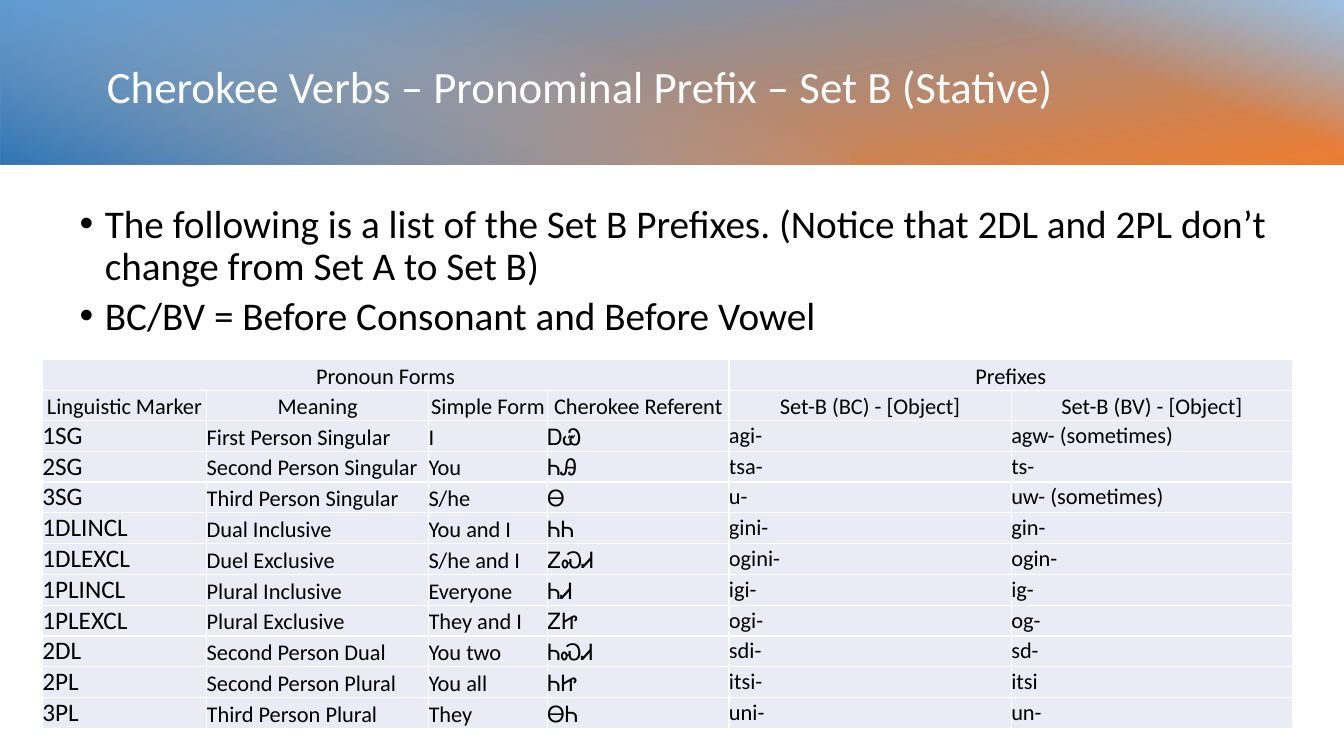
from pptx import Presentation
from pptx.dml.color import RGBColor
from pptx.enum.shapes import MSO_SHAPE
from pptx.enum.text import MSO_ANCHOR as ANCHOR, MSO_AUTO_SIZE as AUTO_SIZE, PP_ALIGN as ALIGN
from pptx.oxml import parse_xml
from pptx.oxml.ns import nsdecls, qn
from pptx.util import Pt

EMU_PER_PX = 9144  # 100 px to the inch
THEME = {
    "font": "Calibri",
    "title": 32, "body": 28, "marker": 18, "cell": 16,
    "white": "FFFFFF", "black": "000000", "cell_fill": "E9EBF5",
    "blue": "5B9BD5", "orange": "ED7D31", "light_blue": "9DC3E6", "deep_blue": "2E75B6",
}


def px(*lengths):
    return [length * EMU_PER_PX for length in lengths]


def add_run(paragraph, text, size, color):
    run = paragraph.add_run()
    run.text = text
    run.font.name = THEME["font"]
    run.font.size = Pt(THEME[size])
    run.font.color.rgb = RGBColor.from_string(THEME[color])


deck = Presentation()
deck.slide_width, deck.slide_height = px(1333, 750)
slide = deck.slides.add_slide(deck.slide_layouts[1])
title, notes_list = slide.placeholders

# Gradient banner behind the title: box, rotation, angle, stops (percent, colour, opacity)
banner = slide.shapes.add_group_shape()
banner_layers = [
    ((584, -587, 166, 1334), 270, 170, [(0, "blue", 100), (100, "orange", 100)]),
    ((975, -197, 165, 554), 270, 20, [(59, "light_blue", 0), (100, "light_blue", 100)]),
    ((339, -342, 166, 844), 90, 20, [(29, "light_blue", 0), (100, "deep_blue", 100)]),
]
for box, rotation, angle, stops in banner_layers:
    layer = banner.shapes.add_shape(MSO_SHAPE.RECTANGLE, *px(*box))
    layer.rotation = rotation
    layer.shadow.inherit = False
    layer.line.fill.background()
    stop_xml = "".join(
        f'<a:gs pos="{percent * 1000}"><a:srgbClr val="{THEME[color]}">'
        f'<a:alpha val="{opacity * 1000}"/></a:srgbClr></a:gs>'
        for percent, color, opacity in stops)
    gradient = parse_xml(
        f'<a:gradFill {nsdecls("a")} rotWithShape="1"><a:gsLst>{stop_xml}</a:gsLst>'
        f'<a:lin ang="{angle * 60000}" scaled="0"/></a:gradFill>')
    layer.element.spPr.find(qn("a:prstGeom")).addnext(gradient)
title.element.addprevious(banner.element)

# Title
title.left, title.top, title.width, title.height = px(96, 33, 1146, 110)
title.text_frame.auto_size = AUTO_SIZE.NONE
title.text_frame.vertical_anchor = ANCHOR.MIDDLE
heading = title.text_frame.paragraphs[0]
heading.alignment = ALIGN.LEFT
heading.line_spacing = 0.9
add_run(heading, "Cherokee Verbs – Pronominal Prefix – Set B (Stative)", "title", "white")

# Bulleted list
notes_list.left, notes_list.top, notes_list.width, notes_list.height = px(19, 198, 1287, 159)
notes_list.text_frame.auto_size = AUTO_SIZE.NONE
points = [
    "The following is a list of the Set B Prefixes. "
    "(Notice that 2DL and 2PL don’t change from Set A to Set B)",
    "BC/BV = Before Consonant and Before Vowel",
]
for index, point in enumerate(points):
    frame = notes_list.text_frame
    bullet = frame.add_paragraph() if index else frame.paragraphs[0]
    bullet.level = 1
    bullet.line_spacing = 0.9
    bullet.space_before = Pt(5)
    properties = bullet._p.get_or_add_pPr()
    margin, indent = px(75, -25)
    properties.set("marL", str(margin))
    properties.set("indent", str(indent))
    properties.append(parse_xml(f'<a:buFont {nsdecls("a")} typeface="Arial"/>'))
    properties.append(parse_xml(f'<a:buChar {nsdecls("a")} char="•"/>'))
    add_run(bullet, point, "body", "black")

# Prefix table
prefix_rows = [
    ("Pronoun Forms", "", "", "", "Prefixes", ""),
    ("Linguistic Marker", "Meaning", "Simple Form", "Cherokee Referent",
     "Set-B (BC) - [Object]", "Set-B (BV) - [Object]"),
    ("1SG", "First Person Singular", "I", "ᎠᏯ", "agi-", "agw- (sometimes)"),
    ("2SG", "Second Person Singular", "You", "ᏂᎯ", "tsa-", "ts-"),
    ("3SG", "Third Person Singular", "S/he", "Ꮎ", "u-", "uw- (sometimes)"),
    ("1DLINCL", "Dual Inclusive", "You and I", "ᏂᏂ", "gini-", "gin-"),
    ("1DLEXCL", "Duel Exclusive", "S/he and I", "ᏃᏍᏗ", "ogini-", "ogin-"),
    ("1PLINCL", "Plural Inclusive", "Everyone", "ᏂᏗ", "igi-", "ig-"),
    ("1PLEXCL", "Plural Exclusive", "They and I", "ᏃᏥ", "ogi-", "og-"),
    ("2DL", "Second Person Dual", "You two", "ᏂᏍᏗ", "sdi-", "sd-"),
    ("2PL", "Second Person Plural", "You all", "ᏂᏥ", "itsi-", "itsi"),
    ("3PL", "Third Person Plural", "They", "ᎾᏂ", "uni-", "un-"),
]
column_widths = px(163, 220, 118, 180, 280, 279)
HEADER_ROWS, FIRST_PREFIX_COLUMN = 2, 4
prefixes = slide.shapes.add_table(
    len(prefix_rows), len(column_widths), *px(42, 357, 1240, 360)).table
prefixes.first_row = prefixes.horz_banding = False
for column, width in zip(prefixes.columns, column_widths):
    column.width = width
prefixes.cell(0, 0).merge(prefixes.cell(0, 3))
prefixes.cell(0, 4).merge(prefixes.cell(0, 5))

for r, row in enumerate(prefix_rows):
    is_header = r < HEADER_ROWS
    for c, text in enumerate(row):
        cell = prefixes.cell(r, c)
        cell.margin_left = cell.margin_right = cell.margin_top = cell.margin_bottom = 0
        is_prefix = not is_header and c >= FIRST_PREFIX_COLUMN
        cell.vertical_anchor = ANCHOR.MIDDLE if is_prefix else ANCHOR.BOTTOM
        cell.fill.solid()
        cell.fill.fore_color.rgb = RGBColor.from_string(THEME["cell_fill"])
        for position, side in enumerate(("lnL", "lnR", "lnT", "lnB")):
            cell._tc.tcPr.insert(position, parse_xml(
                f'<a:{side} {nsdecls("a")} w="{Pt(1)}"><a:solidFill>'
                f'<a:srgbClr val="{THEME["white"]}"/></a:solidFill></a:{side}>'))
        if text:
            entry = cell.text_frame.paragraphs[0]
            entry.alignment = ALIGN.CENTER if is_header else ALIGN.LEFT
            is_marker = c == 0 and not is_header
            add_run(entry, text, "marker" if is_marker else "cell", "black")

deck.save("out.pptx")
